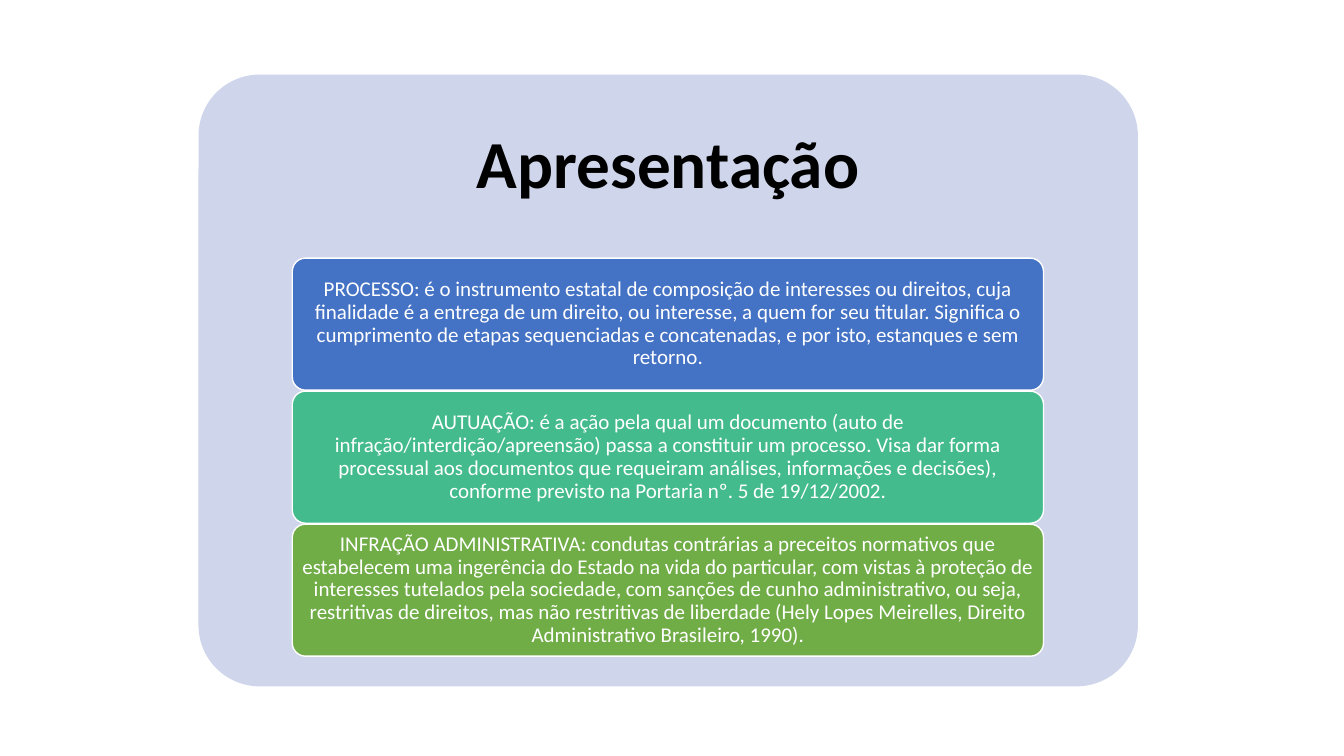
from pptx import Presentation
from pptx.dml.color import RGBColor
from pptx.enum.shapes import MSO_SHAPE as Shape
from pptx.enum.text import MSO_ANCHOR as Anchor, PP_ALIGN as Align
from pptx.util import Pt

CARDS = [
    ("4472C4", "PROCESSO: é o instrumento estatal de composição de interesses ou direitos, "
               "cuja finalidade é a entrega de um direito, ou interesse, a quem for seu titular. "
               "Significa o cumprimento de etapas sequenciadas e concatenadas, e por isto, "
               "estanques e sem retorno."),
    ("43BB8D", "AUTUAÇÃO: é a ação pela qual um documento (auto de "
               "infração/interdição/apreensão) passa a constituir um processo. Visa dar forma "
               "processual aos documentos que requeiram análises, informações e decisões), "
               "conforme previsto na Portaria nº. 5 de 19/12/2002."),
    ("70AD47", "INFRAÇÃO ADMINISTRATIVA: condutas contrárias a preceitos normativos que "
               "estabelecem uma ingerência do Estado na vida do particular, com vistas à "
               "proteção de interesses tutelados pela sociedade, com sanções de cunho "
               "administrativo, ou seja, restritivas de direitos, mas não restritivas de "
               "liberdade (Hely Lopes Meirelles, Direito Administrativo Brasileiro, 1990)."),
]
PANEL_LEFT, PANEL_TOP, PANEL_WIDTH, PANEL_HEIGHT = 141.8, 53.3, 671, 437
TITLE_HEIGHT = 131
CARD_LEFT, CARD_TOP, CARD_WIDTH, CARD_HEIGHT = 208.8, 184.4, 536.6, 94.3
CARD_PITCH = 95


def color(hex_code):
    return RGBColor.from_string(hex_code)


class Page:
    font = "Calibri"
    corner = 0.1
    line_spacing = 0.9

    def __init__(self, deck):
        self.shapes = deck.slides.add_slide(deck.slide_layouts[6]).shapes

    def rounded(self, left, top, width, height, fill, outline=None):
        box = self.shapes.add_shape(Shape.ROUNDED_RECTANGLE,
                                    Pt(left), Pt(top), Pt(width), Pt(height))
        box.shadow.inherit = False
        box.adjustments[0] = self.corner
        box.fill.solid()
        box.fill.fore_color.rgb = color(fill)
        if outline:
            box.line.color.rgb = color(outline)
            box.line.width = Pt(1)
        else:
            box.line.fill.background()
        return box

    def set_text(self, box, text, size, ink, margin_x, margin_y, bold=False):
        """Put one centred paragraph into the box."""
        frame = box.text_frame
        frame.text = text
        frame.word_wrap = True
        frame.vertical_anchor = Anchor.MIDDLE
        frame.margin_left = frame.margin_right = Pt(margin_x)
        frame.margin_top = frame.margin_bottom = Pt(margin_y)
        para = frame.paragraphs[0]
        para.alignment = Align.CENTER
        para.line_spacing = self.line_spacing
        span = para.runs[0]
        span.font.name, span.font.size, span.font.bold = self.font, Pt(size), bold
        span.font.color.rgb = color(ink)

    def title(self, text, left, top, width, height):
        box = self.shapes.add_textbox(Pt(left), Pt(top), Pt(width), Pt(height))
        self.set_text(box, text, 48, "000000", 14.4, 14.4, bold=True)

    def card(self, text, fill, left, top, width, height):
        box = self.rounded(left, top, width, height, fill, "FFFFFF")
        self.set_text(box, text, 15, "FFFFFF", 3, 2.25)


def main():
    deck = Presentation()
    deck.slide_width, deck.slide_height = Pt(960), Pt(540)
    page = Page(deck)
    page.rounded(PANEL_LEFT, PANEL_TOP, PANEL_WIDTH, PANEL_HEIGHT, "CFD5EA")
    page.title("Apresentação", PANEL_LEFT, PANEL_TOP, PANEL_WIDTH, TITLE_HEIGHT)
    for index, (fill, text) in enumerate(CARDS):
        page.card(text, fill, CARD_LEFT, CARD_TOP + index * CARD_PITCH,
                  CARD_WIDTH, CARD_HEIGHT)
    deck.save("out.pptx")


if __name__ == "__main__":
    main()
